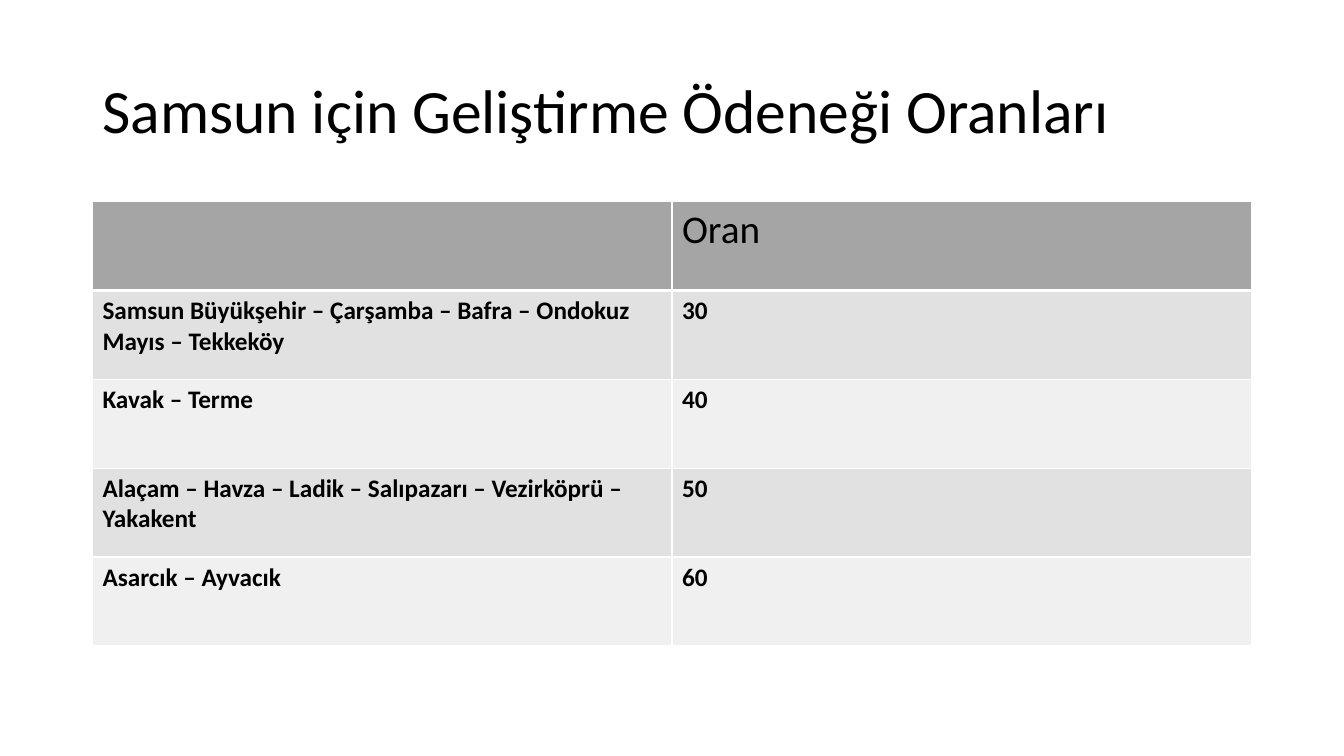
from lxml import etree
from pptx import Presentation
from pptx.dml.color import RGBColor
from pptx.enum.text import MSO_ANCHOR
from pptx.oxml.ns import qn
from pptx.util import Cm, Pt

MIDDLE = MSO_ANCHOR.MIDDLE
BLACK = RGBColor(0x00, 0x00, 0x00)
WHITE = RGBColor(0xFF, 0xFF, 0xFF)
HEADER_GRAY = RGBColor(0xA5, 0xA5, 0xA5)
DARK_BAND = RGBColor(0xE1, 0xE1, 0xE1)
LIGHT_BAND = RGBColor(0xF0, 0xF0, 0xF0)

RATES = [
    ("", "Oran"),
    ("Samsun Büyükşehir – Çarşamba – Bafra – Ondokuz Mayıs – Tekkeköy", "30"),
    ("Kavak – Terme", "40"),
    ("Alaçam – Havza – Ladik – Salıpazarı – Vezirköprü – Yakakent", "50"),
    ("Asarcık – Ayvacık", "60"),
]


def write_text(text_frame, text, size, bold=False, line_spacing=None):
    paragraph = text_frame.paragraphs[0]
    paragraph.line_spacing = line_spacing
    run = paragraph.add_run()
    run.text = text
    run.font.name = "Calibri"
    run.font.size = Pt(size)
    run.font.bold = bold
    run.font.color.rgb = BLACK


def add_border(cell, side, width):
    properties = cell._tc.get_or_add_tcPr()
    line = etree.SubElement(properties, qn(f"a:ln{side}"), w=str(Pt(width)))
    fill = etree.SubElement(line, qn("a:solidFill"))
    etree.SubElement(fill, qn("a:srgbClr"), val=str(WHITE))


presentation = Presentation()
presentation.slide_width = Cm(33.87)
presentation.slide_height = Cm(19.05)
slide = presentation.slides.add_slide(presentation.slide_layouts[6])

title = slide.shapes.add_textbox(Cm(2.33), Cm(1.01), Cm(29.21), Cm(3.68))
title.text_frame.word_wrap = True
title.text_frame.vertical_anchor = MIDDLE
write_text(title.text_frame, "Samsun için Geliştirme Ödeneği Oranları", 44, line_spacing=0.9)

table = slide.shapes.add_table(
    len(RATES), 2, Cm(2.33), Cm(5.08), Cm(29.21), Cm(11.2)
).table

for row_index, row in enumerate(RATES):
    is_header = row_index == 0
    band = DARK_BAND if row_index % 2 else LIGHT_BAND
    for column_index, text in enumerate(row):
        cell = table.cell(row_index, column_index)
        for side in "LRTB":
            thick = (is_header and side == "B") or (row_index == 1 and side == "T")
            add_border(cell, side, 3 if thick else 1)
        cell.fill.solid()
        cell.fill.fore_color.rgb = HEADER_GRAY if is_header else band
        if text:
            write_text(cell.text_frame, text, 28 if is_header else 18, bold=not is_header)

presentation.save("out.pptx")
